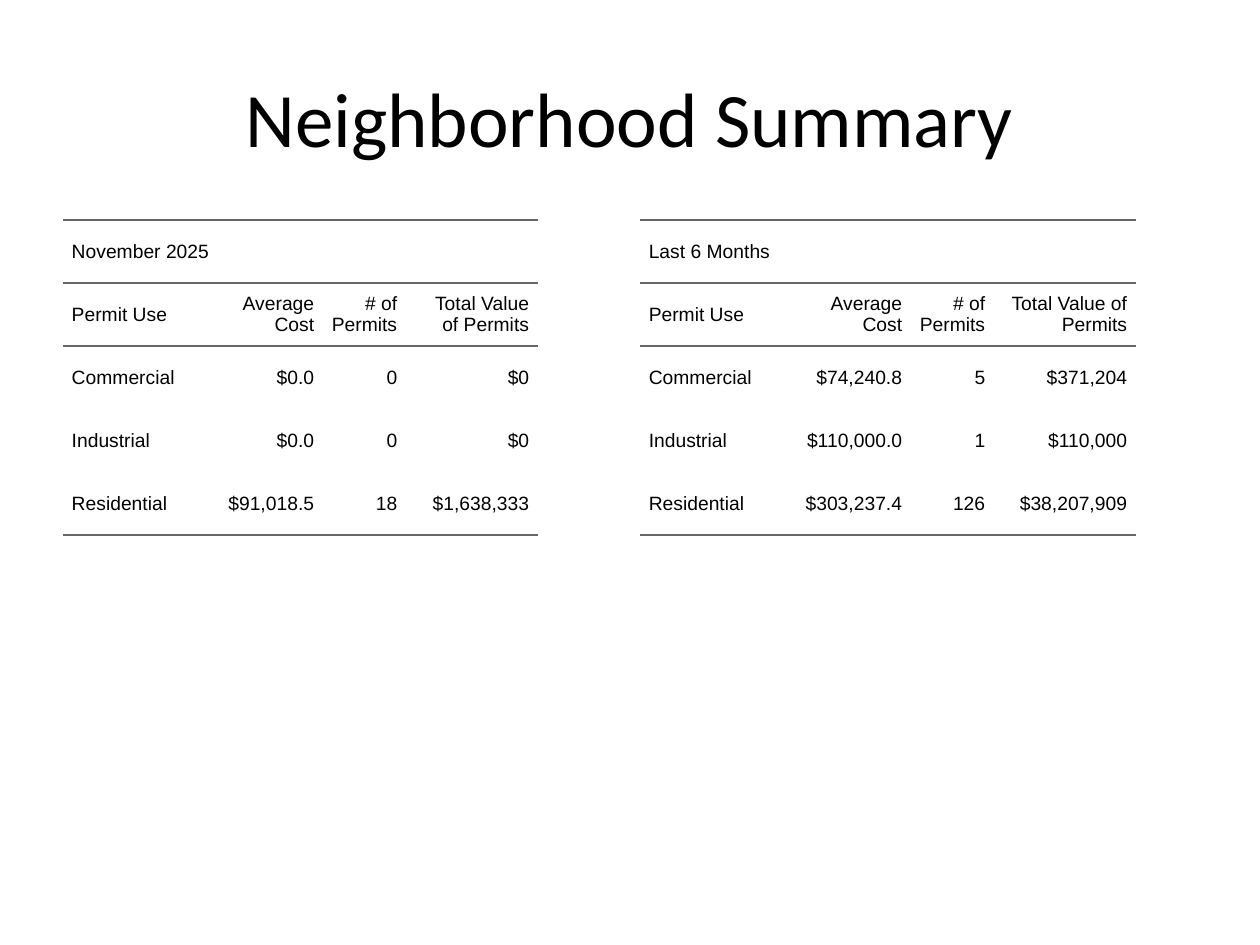
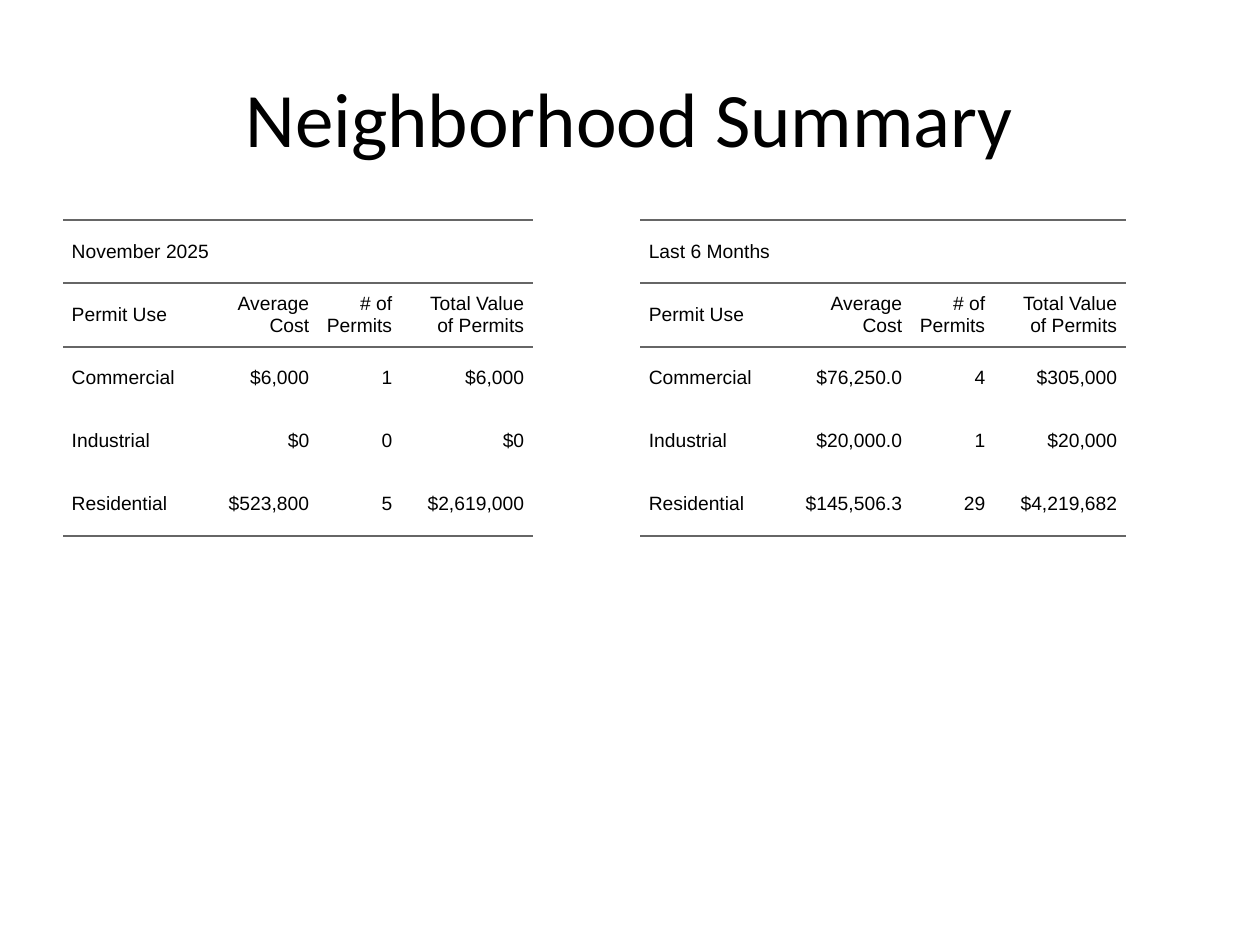
from dataclasses import dataclass

from lxml.etree import SubElement
from pptx import Presentation
from pptx.dml.color import RGBColor
from pptx.enum.text import MSO_ANCHOR as ANCHOR, PP_ALIGN as ALIGN
from pptx.oxml.ns import qn
from pptx.util import Emu, Pt


@dataclass(frozen=True)
class Theme:
    """Colours, fonts and type sizes shared by the slides."""
    text: str = "000000"
    rule: str = "666666"
    title_font: str = "Calibri"
    table_font: str = "Arial"
    title_size: int = 44
    table_size: int = 11
    rule_width: float = 1.5
    cell_pad: int = 5


THEME = Theme()
PX_PER_INCH = 126
SLIDE_W, SLIDE_H = 1260, 945
TITLE = "Neighborhood Summary"
TITLE_BOX = (63, 38, 1134, 157)
MONTH_POS, HALF_YEAR_POS = (63, 220), (640, 220)
ROW_H = 63
HEADINGS = ("Permit Use", "Average Cost", "# of Permits", "Total Value of Permits")
USES = ("Commercial", "Industrial", "Residential")
MONTH, HALF_YEAR = "November 2025", "Last 6 Months"

SUMMARIES = [
    [
        (MONTH_POS, MONTH, (139, 121, 83, 132),
         [("$0.0", "0", "$0"),
          ("$0.0", "0", "$0"),
          ("$91,018.5", "18", "$1,638,333")]),
        (HALF_YEAR_POS, HALF_YEAR, (139, 132, 83, 142),
         [("$74,240.8", "5", "$371,204"),
          ("$110,000.0", "1", "$110,000"),
          ("$303,237.4", "126", "$38,207,909")]),
    ],
    [
        (MONTH_POS, MONTH, (139, 116, 83, 132),
         [("$6,000", "1", "$6,000"),
          ("$0", "0", "$0"),
          ("$523,800", "5", "$2,619,000")]),
        (HALF_YEAR_POS, HALF_YEAR, (139, 132, 83, 132),
         [("$76,250.0", "4", "$305,000"),
          ("$20,000.0", "1", "$20,000"),
          ("$145,506.3", "29", "$4,219,682")]),
    ],
]


def px(n):
    """Turn pixels into EMU."""
    return Emu(round(n * 914400 / PX_PER_INCH))


def style_text(p, font, size, align):
    """Set the font, size, colour and alignment of a paragraph."""
    p.alignment = align
    p.font.name = font
    p.font.size = Pt(size)
    p.font.color.rgb = RGBColor.from_string(THEME.text)


def add_title(slide, box):
    """Add the centred slide title in the given box."""
    tf = slide.shapes.add_textbox(*map(px, box)).text_frame
    tf.word_wrap = True
    tf.vertical_anchor = ANCHOR.MIDDLE
    p = tf.paragraphs[0]
    p.text = TITLE
    style_text(p, THEME.title_font, THEME.title_size, ALIGN.CENTER)


def set_borders(cell, ruled):
    """Rule the named sides of a cell and clear the others."""
    tc_pr = cell._tc.get_or_add_tcPr()
    for side in "LRTB":
        ln = SubElement(tc_pr, qn(f"a:ln{side}"), w=str(Pt(THEME.rule_width)))
        if side in ruled:
            fill = SubElement(ln, qn("a:solidFill"))
            SubElement(fill, qn("a:srgbClr"), val=THEME.rule)
        else:
            SubElement(ln, qn("a:noFill"))


def fill_cell(cell, text, align, ruled):
    """Write and style one table cell."""
    pad = Pt(THEME.cell_pad)
    set_borders(cell, ruled)
    cell.fill.background()
    cell.vertical_anchor = ANCHOR.MIDDLE
    cell.margin_left = cell.margin_right = 0
    cell.margin_top = cell.margin_bottom = pad
    p = cell.text_frame.paragraphs[0]
    p.text = text
    p.space_before = p.space_after = pad
    style_text(p, THEME.table_font, THEME.table_size, align)
    p_pr = p._p.get_or_add_pPr()
    for margin in ("marL", "marR"):
        p_pr.set(margin, str(pad))


def add_permit_table(slide, pos, period, widths, figures):
    """Add the permit figures of one period at the given position."""
    rows = [(period, "", "", ""), HEADINGS]
    rows += [(use, *values) for use, values in zip(USES, figures)]
    size = (sum(widths), ROW_H * len(rows))
    table = slide.shapes.add_table(len(rows), len(widths), *map(px, pos + size)).table
    table.first_row = table.horz_banding = False
    for column, width in zip(table.columns, widths):
        column.width = px(width)
    ruled = ["TB", "TB", "T", "", "B"]
    for r, row in enumerate(rows):
        table.rows[r].height = px(ROW_H)
        for c, text in enumerate(row):
            align = ALIGN.RIGHT if c else ALIGN.LEFT
            fill_cell(table.cell(r, c), text, align, ruled[r])
    table.cell(0, 0).merge(table.cell(0, len(widths) - 1))


def add_summary_slide(prs, summaries):
    """Add a slide with one table for each period."""
    slide = prs.slides.add_slide(prs.slide_layouts[6])
    for summary in summaries:
        add_permit_table(slide, *summary)
    add_title(slide, TITLE_BOX)


def main():
    """Build and save the presentation."""
    prs = Presentation()
    prs.slide_width, prs.slide_height = px(SLIDE_W), px(SLIDE_H)
    for summaries in SUMMARIES:
        add_summary_slide(prs, summaries)
    prs.save("out.pptx")


if __name__ == "__main__":
    main()
